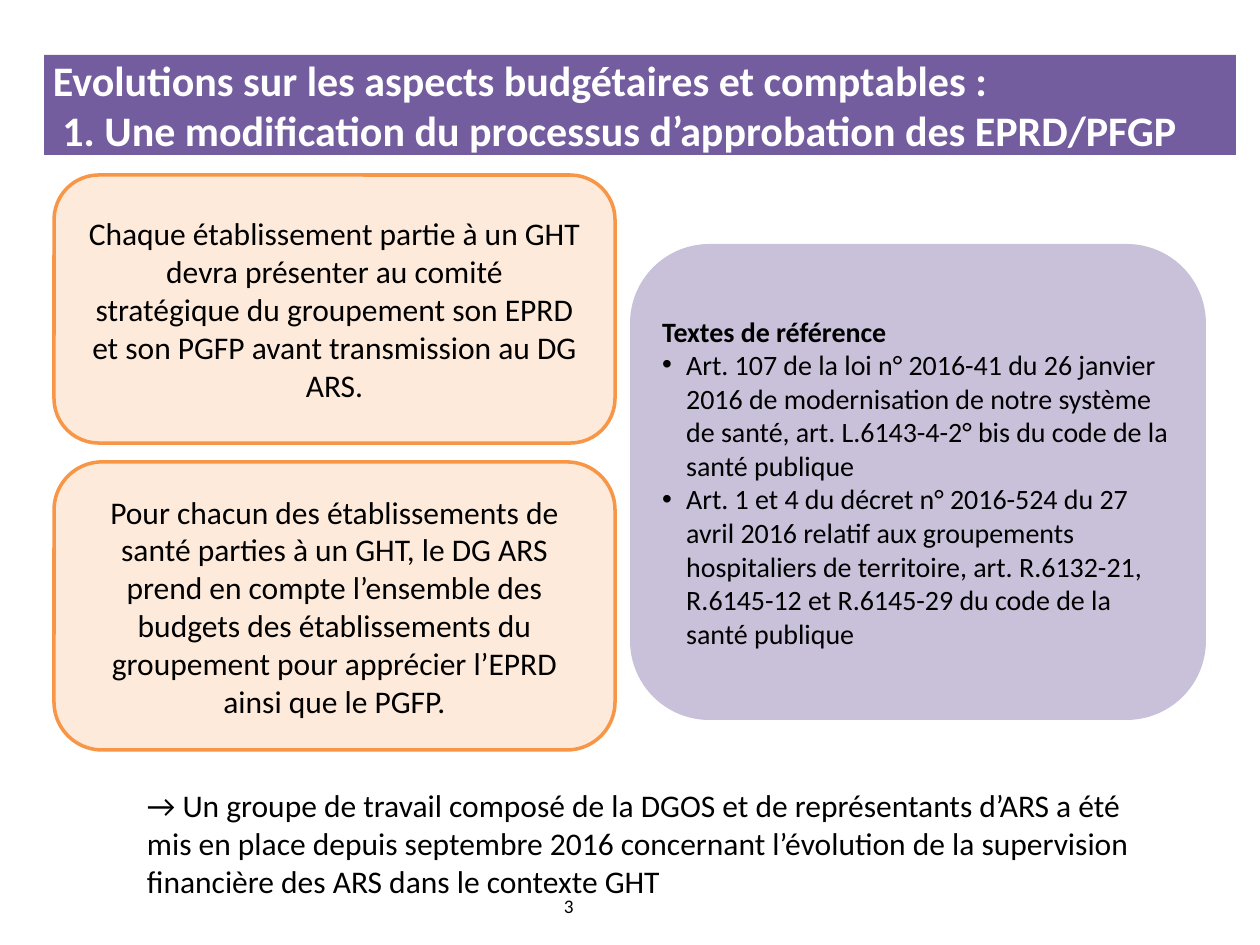
"""Build the slide on the approval process of EPRD/PGFP budgets."""
from dataclasses import dataclass

from lxml import etree
from pptx import Presentation
from pptx.dml.color import RGBColor
from pptx.enum.shapes import MSO_SHAPE
from pptx.enum.text import MSO_ANCHOR, PP_ALIGN
from pptx.oxml.ns import qn
from pptx.util import Emu, Pt

RECT, ROUND = MSO_SHAPE.RECTANGLE, MSO_SHAPE.ROUNDED_RECTANGLE
LEFT, CENTER = PP_ALIGN.LEFT, PP_ALIGN.CENTER
TOP, MIDDLE = MSO_ANCHOR.TOP, MSO_ANCHOR.MIDDLE
PX_PER_INCH = 126
WIDE_INSET, TIGHT_INSET = (13, 6), (9, 5)


@dataclass(frozen=True)
class Theme:
    font: str = "Calibri"
    black: str = "000000"
    white: str = "FFFFFF"
    purple: str = "735D9F"
    lilac: str = "C9C0DA"
    cream: str = "FDEADA"
    orange: str = "F79646"
    title: int = 24
    body: int = 18
    reference: int = 16
    number: int = 11
    border: int = 2


THEME = Theme()


@dataclass(frozen=True)
class Para:
    text: str
    bold: bool = False
    hanging: int = 0
    bullet: str = ""


@dataclass(frozen=True)
class Block:
    box: tuple[int, int, int, int]
    paras: list[Para]
    size: int = THEME.body
    color: str = THEME.black
    shape: MSO_SHAPE | None = None
    fill: str = ""
    line: str = ""
    align: PP_ALIGN = LEFT
    inset: tuple[int, int] = WIDE_INSET


def px(n: int) -> Emu:
    """Turn pixels into EMU."""
    return Emu(round(n * 914400 / PX_PER_INCH))


def add_para(p, para: Para, block: Block) -> None:
    """Fill one paragraph with its run, indent and bullet."""
    p.alignment = block.align
    pPr = p._p.get_or_add_pPr()
    if para.hanging:
        pPr.set("marL", str(px(para.hanging)))
        pPr.set("indent", str(px(-para.hanging)))
    if para.bullet:
        etree.SubElement(pPr, qn("a:buFont")).set("typeface", "Arial")
        etree.SubElement(pPr, qn("a:buChar")).set("char", para.bullet)
    r = p.add_run()
    r.text = para.text
    r.font.name = THEME.font
    r.font.size = Pt(block.size)
    r.font.bold = para.bold
    r.font.color.rgb = RGBColor.from_string(block.color)


def add_block(slide, block: Block) -> None:
    """Draw one shape or text box with its paragraphs."""
    box = [px(n) for n in block.box]
    if block.shape is None:
        sp = slide.shapes.add_textbox(*box)
    else:
        sp = slide.shapes.add_shape(block.shape, *box)
        sp.shadow.inherit = False
        sp.fill.solid()
        sp.fill.fore_color.rgb = RGBColor.from_string(block.fill)
        if block.line:
            sp.line.color.rgb = RGBColor.from_string(block.line)
            sp.line.width = Pt(THEME.border)
        else:
            sp.line.fill.background()
    tf = sp.text_frame
    tf.word_wrap = True
    tf.vertical_anchor = TOP if block.shape is None else MIDDLE
    tf.margin_left = tf.margin_right = px(block.inset[0])
    tf.margin_top = tf.margin_bottom = px(block.inset[1])
    for i, para in enumerate(block.paras):
        add_para(tf.add_paragraph() if i else tf.paragraphs[0], para, block)


def card(top: int, height: int, *texts: str) -> Block:
    """Describe a bordered card of the left column."""
    return Block((54, top, 561, height), [Para(t) for t in texts], shape=ROUND,
                 fill=THEME.cream, line=THEME.orange, align=CENTER)


BLOCKS = [
    Block((44, 55, 1192, 100), [
        Para("Evolutions sur les aspects budgétaires et comptables :", True, 48),
        Para(" 1. Une modification du processus d’approbation des EPRD/PFGP", True, 48),
    ], THEME.title, THEME.white, RECT, THEME.purple, inset=TIGHT_INSET),
    card(175, 268,
         "Chaque établissement partie à un GHT devra présenter au comité",
         "stratégique du groupement son EPRD et son PGFP avant transmission au DG ARS."),
    card(462, 288,
         "Pour chacun des établissements de santé parties à un GHT, le DG ARS prend en "
         "compte l’ensemble des budgets des établissements du groupement pour apprécier "
         "l’EPRD ainsi que le PGFP."),
    Block((630, 244, 576, 476), [
        Para("Textes de référence", True),
        Para("Art. 107 de la loi n° 2016-41 du 26 janvier 2016 de modernisation de notre "
             "système de santé, art. L.6143-4-2° bis du code de la santé publique",
             hanging=24, bullet="•"),
        Para("Art. 1 et 4 du décret n° 2016-524 du 27 avril 2016 relatif aux groupements "
             "hospitaliers de territoire, art. R.6132-21, R.6145-12 et R.6145-29 du code "
             "de la santé publique", hanging=24, bullet="•"),
    ], THEME.reference, shape=ROUND, fill=THEME.lilac, inset=TIGHT_INSET),
    Block((134, 780, 1032, 127), [
        Para("→ Un groupe de travail composé de la DGOS et de représentants d’ARS a été mis "
             "en place depuis septembre 2016 concernant l’évolution de la supervision "
             "financière des ARS dans le contexte GHT"),
    ]),
    Block((551, 888, 294, 50), [Para("3")], THEME.number),
]


def main() -> None:
    """Build and save the slide."""
    prs = Presentation()
    prs.slide_width, prs.slide_height = px(1260), px(945)
    slide = prs.slides.add_slide(prs.slide_layouts[6])
    for block in BLOCKS:
        add_block(slide, block)
    prs.save("out.pptx")


if __name__ == "__main__":
    main()
